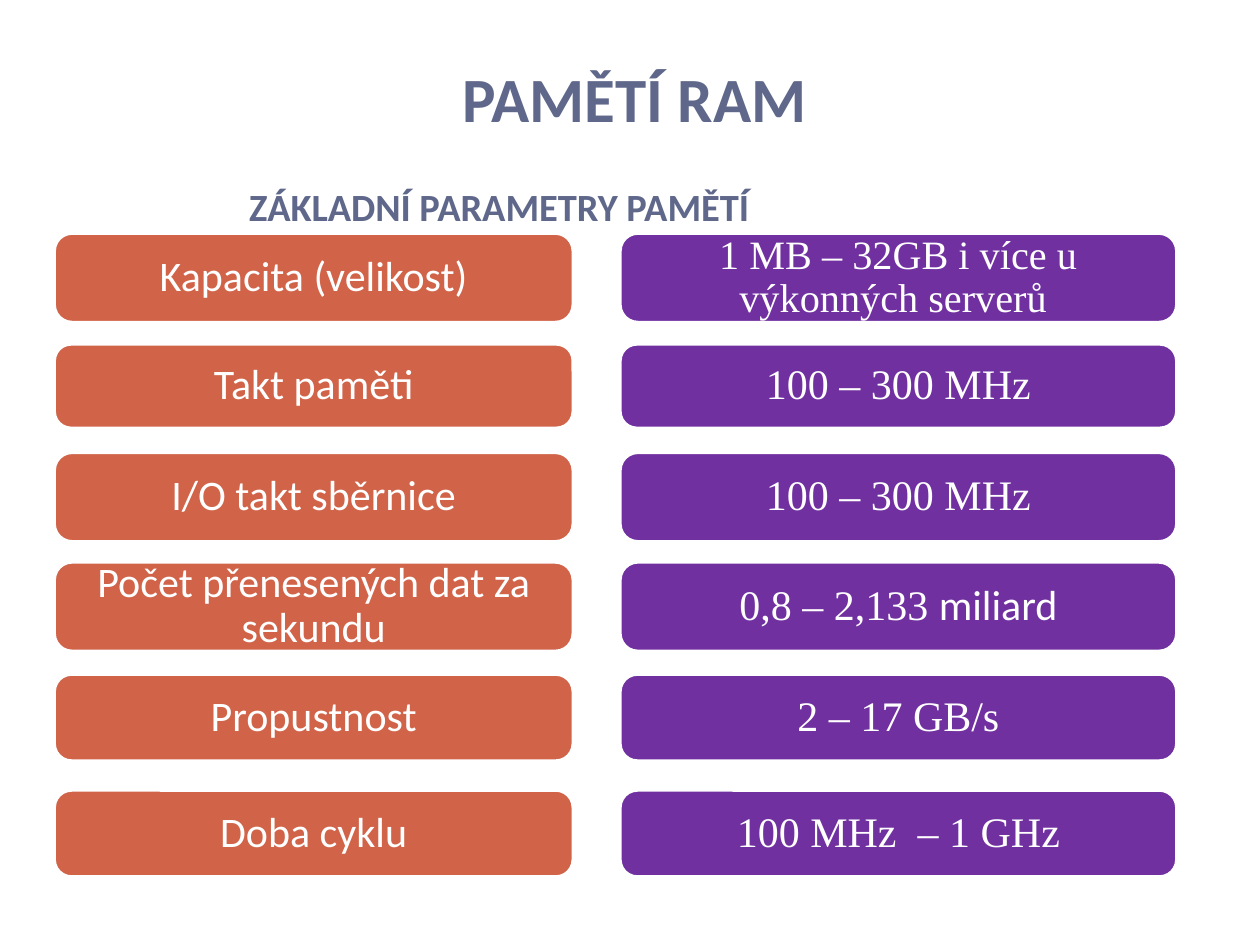
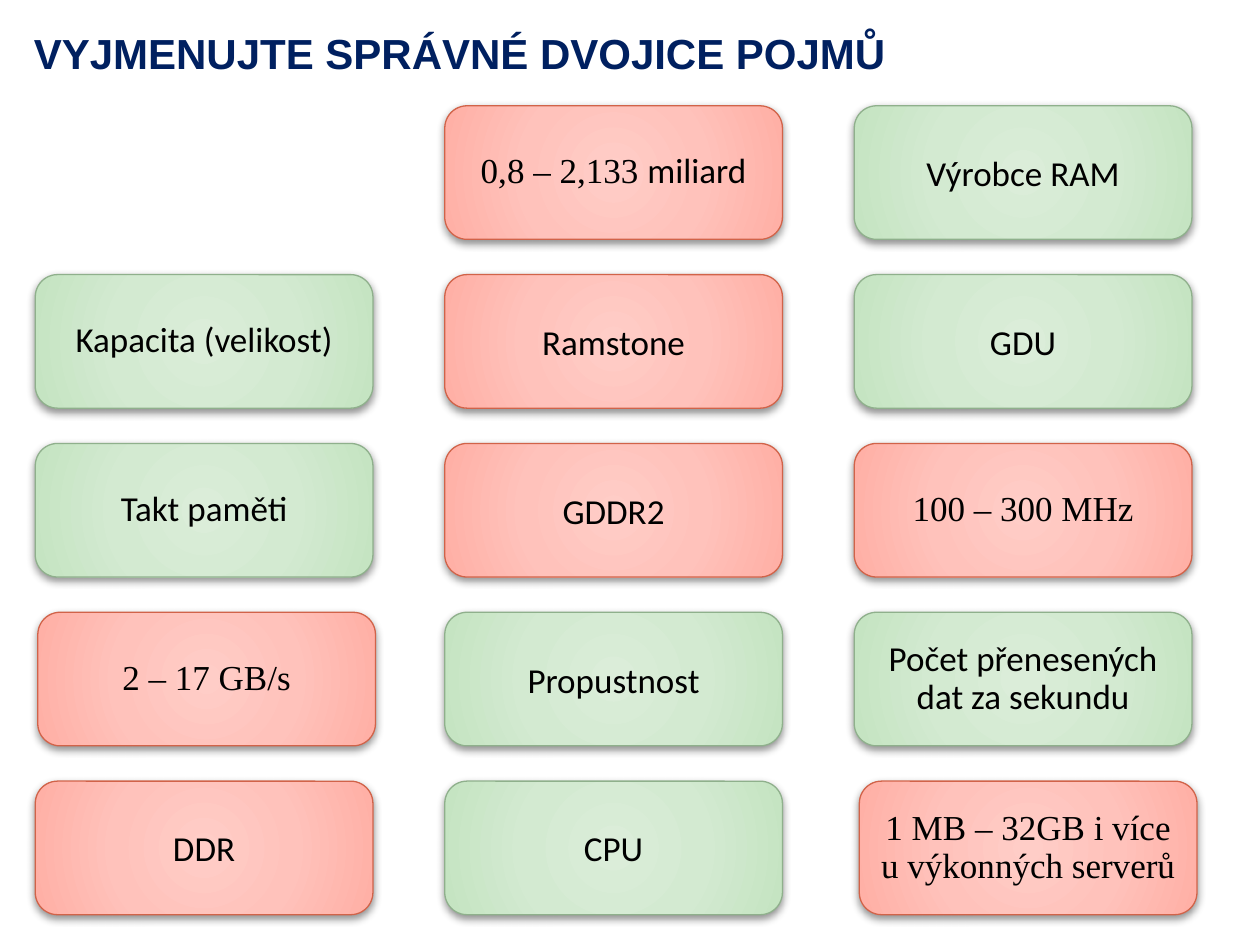
from dataclasses import dataclass

from pptx import Presentation
from pptx.dml.color import RGBColor
from pptx.enum.shapes import MSO_SHAPE
from pptx.enum.text import MSO_ANCHOR, PP_ALIGN
from pptx.oxml import parse_xml
from pptx.oxml.ns import nsdecls, qn
from pptx.util import Inches, Pt

ROUNDED = MSO_SHAPE.ROUNDED_RECTANGLE
LEFT, CENTER = PP_ALIGN.LEFT, PP_ALIGN.CENTER
MIDDLE, TOP, BOTTOM = MSO_ANCHOR.MIDDLE, MSO_ANCHOR.TOP, MSO_ANCHOR.BOTTOM


@dataclass(frozen=True)
class CardColors:
    line: str
    stops: tuple


@dataclass(frozen=True)
class Theme:
    sans: str = "Calibri"
    serif: str = "Times New Roman"
    heading: str = "Arial"
    slate: str = "5F688B"
    navy: str = "002060"
    orange: str = "D16349"
    purple: str = "7030A0"
    white: str = "FFFFFF"
    black: str = "000000"
    red_card: CardColors = CardColors(
        "D16349", ((0, "FFCDC7"), (50, "FFC2BB"), (97, "FFB0A6"), (100, "FFAAA0")))
    green_card: CardColors = CardColors(
        "8FB08C", ((0, "DBEDD9"), (50, "D3EAD1"), (97, "C5E4C2"), (100, "C0E4BD")))
    title_size: int = 36
    subtitle_size: int = 22
    task_size: int = 24
    bar_size: int = 24
    tight_bar_size: int = 23
    card_size: int = 20


THEME = Theme()


@dataclass(frozen=True)
class Label:
    """Text as (words, font) runs with its line spacing."""
    runs: tuple
    spacing: float = 0.9


def term(words, spacing=0.9):
    return Label(((words, THEME.sans),), spacing)


def value(words):
    return Label(((words, THEME.serif),))


CAPACITY = term("Kapacita (velikost)")
CLOCK = term("Takt paměti")
TRANSFERS = term("Počet přenesených dat za sekundu")
CAPACITY_RANGE = value("1 MB – 32GB i více u výkonných serverů ")
CLOCK_RANGE = value("100 – 300 MHz")
TRANSFER_RANGE = Label((("0,8 – 2,133 ", THEME.serif), ("miliard", THEME.sans)))
THROUGHPUT_RANGE = value("2 – 17 GB/s")

# top, height, parameter, range, size of the range
PARAMETERS = (
    (1.85, 0.71, CAPACITY, CAPACITY_RANGE, THEME.tight_bar_size),
    (2.73, 0.67, CLOCK, CLOCK_RANGE, THEME.bar_size),
    (3.59, 0.71, term("I/O takt sběrnice"), CLOCK_RANGE, THEME.bar_size),
    (4.46, 0.71, TRANSFERS, TRANSFER_RANGE, THEME.bar_size),
    (5.35, 0.69, term("Propustnost"), THROUGHPUT_RANGE, THEME.bar_size),
    (6.27, 0.69, term("Doba cyklu"), value("100 MHz  – 1 GHz"), THEME.bar_size),
)

RED, GREEN = THEME.red_card, THEME.green_card
CARD_ROWS = (
    (None, (RED, TRANSFER_RANGE), (GREEN, term("Výrobce RAM", 1.0))),
    ((GREEN, CAPACITY), (RED, term("Ramstone", 1.0)), (GREEN, term("GDU", 1.0))),
    ((GREEN, CLOCK), (RED, term("GDDR2", 1.0)), (RED, CLOCK_RANGE)),
    ((RED, THROUGHPUT_RANGE), (GREEN, term("Propustnost", 1.0)), (GREEN, TRANSFERS)),
    ((RED, term("DDR", 1.0)), (GREEN, term("CPU", 1.0)), (RED, CAPACITY_RANGE)),
)
CARD_NUDGES = {(3, 0): 0.02, (4, 2): 0.04}


class Deck:
    def __init__(self, theme):
        self.theme = theme
        self.presentation = Presentation()
        self.presentation.slide_width = Inches(10)
        self.presentation.slide_height = Inches(7.5)
        self.slide = None

    def new_slide(self):
        self.slide = self.presentation.slides.add_slide(
            self.presentation.slide_layouts[6])

    def set_text(self, shape, label, size, color, align=CENTER, anchor=MIDDLE, bold=False):
        frame = shape.text_frame
        frame.word_wrap = True
        frame.vertical_anchor = anchor
        paragraph = frame.paragraphs[0]
        paragraph.alignment = align
        paragraph.line_spacing = label.spacing
        font = paragraph.font
        font.size, font.bold = Pt(size), bold
        font.color.rgb = RGBColor.from_string(color)
        font.name = label.runs[0][1]
        for words, name in label.runs:
            run = paragraph.add_run()
            run.text = words
            if name != font.name:
                run.font.name = name

    def heading(self, box, label, size, color, align=CENTER, anchor=BOTTOM):
        shape = self.slide.shapes.add_textbox(*map(Inches, box))
        self.set_text(shape, label, size, color, align, anchor, bold=True)

    def rounded(self, box, line, line_width):
        shape = self.slide.shapes.add_shape(ROUNDED, *map(Inches, box))
        shape.shadow.inherit = False
        shape.line.color.rgb = RGBColor.from_string(line)
        shape.line.width = Pt(line_width)
        return shape

    def bar(self, box, label, size, fill):
        shape = self.rounded(box, self.theme.white, 2)
        shape.adjustments[0] = 0.2
        shape.fill.solid()
        shape.fill.fore_color.rgb = RGBColor.from_string(fill)
        frame = shape.text_frame
        frame.margin_left = frame.margin_right = Inches(0.1)
        frame.margin_top = frame.margin_bottom = Inches(0.06)
        self.set_text(shape, label, size, self.theme.white)

    def card(self, box, label, colors):
        """Raised card with a radial gradient and a soft shadow."""
        shape = self.rounded(box, colors.line, 0.75)
        stops = "".join(
            f'<a:gs pos="{position * 1000}"><a:srgbClr val="{color}"/></a:gs>'
            for position, color in colors.stops)
        properties = shape._element.spPr
        properties.find(qn("a:prstGeom")).addnext(parse_xml(
            f'<a:gradFill {nsdecls("a")} rotWithShape="1"><a:gsLst>{stops}</a:gsLst>'
            '<a:path path="circle"><a:fillToRect l="50000" t="50000" r="50000" b="50000"/>'
            '</a:path></a:gradFill>'))
        properties.find(qn("a:effectLst")).append(parse_xml(
            f'<a:outerShdw {nsdecls("a")} blurRad="{Pt(5)}" dist="{Pt(2)}" dir="5400000" '
            f'rotWithShape="0"><a:srgbClr val="{self.theme.black}">'
            '<a:alpha val="43000"/></a:srgbClr></a:outerShdw>'))
        self.set_text(shape, label, self.theme.card_size, self.theme.black)


def build_parameters(deck):
    theme = deck.theme
    deck.new_slide()
    deck.heading((0.43, 0.44, 9.21, 0.68), term("PAMĚTÍ RAM", Pt(20)),
                 theme.title_size, theme.slate)
    deck.heading((1.88, 1.4, 7.63, 0.47), term("ZÁKLADNÍ PARAMETRY PAMĚTÍ", 1.0),
                 theme.subtitle_size, theme.slate, LEFT, TOP)
    for top, height, parameter, span, span_size in PARAMETERS:
        deck.bar((0.43, top, 4.12, height), parameter, theme.bar_size, theme.orange)
        deck.bar((4.92, top, 4.42, height), span, span_size, theme.purple)


def build_pairs(deck):
    theme = deck.theme
    deck.new_slide()
    task = Label((("VYJMENUJTE SPRÁVNÉ DVOJICE POJMŮ ", theme.heading),), Pt(20))
    deck.heading((0.12, 0.13, 7.15, 0.54), task, theme.task_size, theme.navy)
    for row, cards in enumerate(CARD_ROWS):
        for column, card in enumerate(cards):
            if card is None:
                continue
            colors, label = card
            left = 0.28 + 3.25 * column + CARD_NUDGES.get((row, column), 0)
            top = 0.84 + 1.34 * row
            deck.card((left, top, 2.68, 1.06), label, colors)


def main():
    deck = Deck(THEME)
    build_parameters(deck)
    build_pairs(deck)
    deck.presentation.save("out.pptx")


if __name__ == "__main__":
    main()
